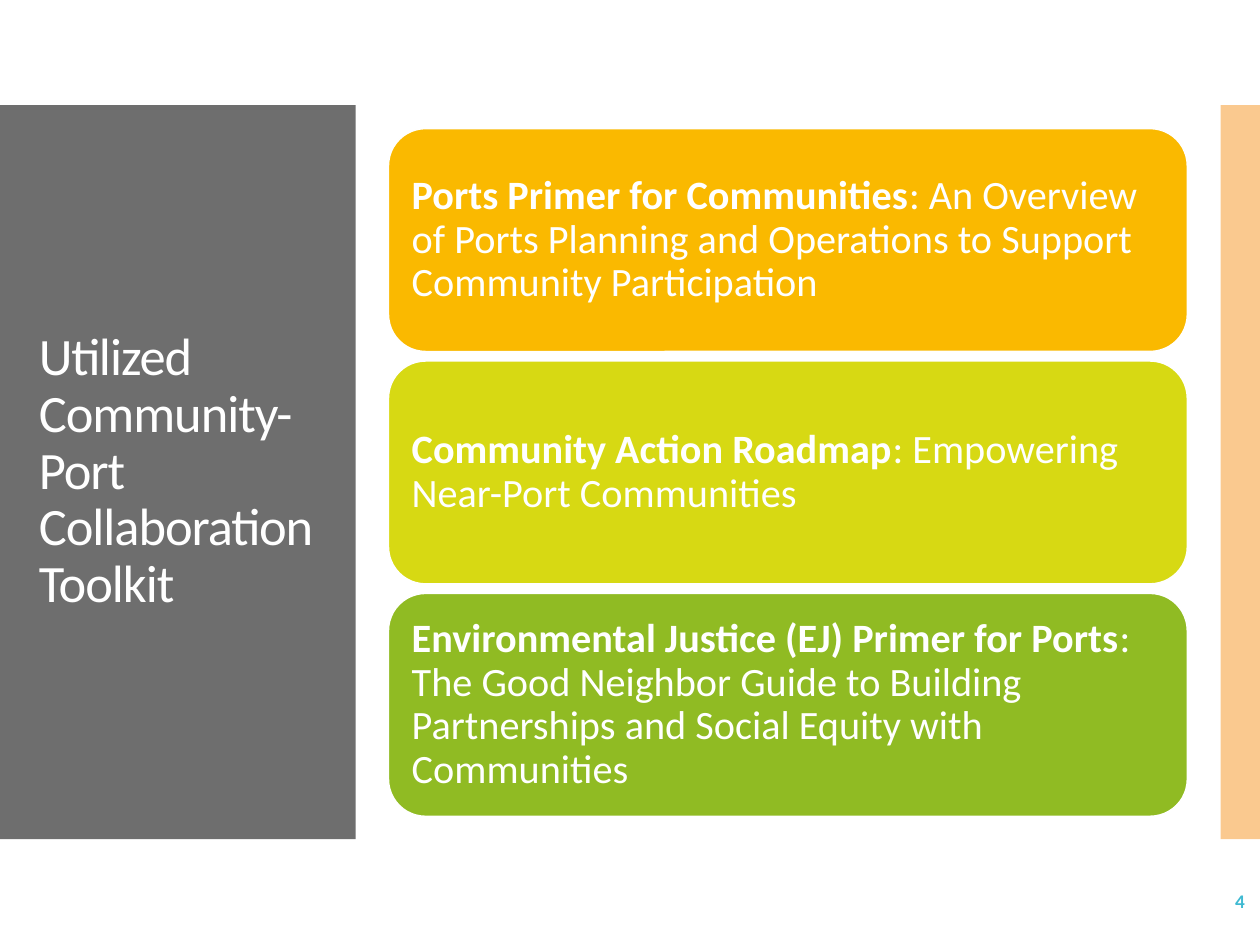
import pptx
import pptx.util
import pptx.dml.color
import pptx.enum.shapes
import pptx.enum.text
from lxml import etree

Pt = pptx.util.Pt
SHAPES = pptx.enum.shapes.MSO_SHAPE
ANCHOR = pptx.enum.text.MSO_ANCHOR
ALIGN = pptx.enum.text.PP_ALIGN

FONT = "Calibri"
COLORS = {
    "panel": "6E6E6E",
    "accent": "F79421",
    "white": "FFFFFF",
    "number": "40BAD2",
    "amber": "FAB900",
    "lime": "D7D913",
    "green": "90BB23",
}
# Non-breaking spaces follow some of the colons
TOOLS = [
    ("amber", "Ports Primer for Communities",
     ": An Overview of Ports Planning and Operations to Support Community Participation"),
    ("lime", "Community Action Roadmap",
     ": Empowering Near-Port Communities"),
    ("green", "Environmental Justice (EJ) Primer for Ports",
     ": The Good Neighbor Guide to Building Partnerships and Social Equity with Communities"),
]


def rgb(name):
    return pptx.dml.color.RGBColor.from_string(COLORS[name])


def format_run(run, size, color, bold=False):
    run.font.name = FONT
    run.font.size = Pt(size)
    run.font.bold = bold
    run.font.color.rgb = rgb(color)


def add_filled_shape(slide, kind, box, color):
    shape = slide.shapes.add_shape(kind, *map(Pt, box))
    shape.shadow.inherit = False
    shape.fill.solid()
    shape.fill.fore_color.rgb = rgb(color)
    shape.line.fill.background()
    return shape


def add_title_panel(slide, box):
    left, top, width, height = box
    panel = add_filled_shape(slide, SHAPES.RECTANGLE, box, "panel")
    title = slide.shapes.title
    # Bring the title in front of its panel
    panel._element.addnext(title._element)
    title.left, title.top = Pt(left + 15), Pt(top + 29)
    title.width, title.height = Pt(width - 18), Pt(height - 58)
    frame = title.text_frame
    frame.text = "Utilized Community-Port Collaboration Toolkit"
    frame.word_wrap = True
    frame.auto_size = pptx.enum.text.MSO_AUTO_SIZE.NONE
    frame.vertical_anchor = ANCHOR.MIDDLE
    paragraph = frame.paragraphs[0]
    paragraph.alignment = ALIGN.LEFT
    paragraph.line_spacing = 0.9
    run = paragraph.runs[0]
    format_run(run, 30, "white")
    run.font._element.set("spc", "-60")


def add_accent_bar(slide, box):
    bar = add_filled_shape(slide, SHAPES.RECTANGLE, box, "accent")
    color = bar.fill._xPr.find(".//" + pptx.oxml.ns.qn("a:srgbClr"))
    etree.SubElement(color, pptx.oxml.ns.qn("a:alpha"), val="50000")


def add_tool_cards(slide, box, gap):
    left, top, width, height = box
    card_height = (height - gap * (len(TOOLS) - 1)) / len(TOOLS)
    for index, (color, name, description) in enumerate(TOOLS):
        card_top = top + index * (card_height + gap)
        card = add_filled_shape(slide, SHAPES.ROUNDED_RECTANGLE,
                                (left, card_top, width, card_height), color)
        card.line.color.rgb = rgb("white")
        card.line.width = Pt(0.85)
        frame = card.text_frame
        frame.word_wrap = True
        frame.vertical_anchor = ANCHOR.MIDDLE
        frame.margin_left = frame.margin_right = Pt(7.2)
        frame.margin_top = frame.margin_bottom = Pt(7.2)
        paragraph = frame.paragraphs[0]
        paragraph.alignment = ALIGN.LEFT
        paragraph.line_spacing = 0.9
        for text, bold in ((name, True), (description, False)):
            run = paragraph.add_run()
            run.text = text
            format_run(run, 23, "white", bold)


def add_slide_number(slide, box, number):
    frame = slide.shapes.add_textbox(*map(Pt, box)).text_frame
    frame.text = str(number)
    frame.word_wrap = True
    frame.vertical_anchor = ANCHOR.MIDDLE
    paragraph = frame.paragraphs[0]
    paragraph.alignment = ALIGN.RIGHT
    format_run(paragraph.runs[0], 11, "number", bold=True)


def main():
    presentation = pptx.Presentation()
    presentation.slide_width, presentation.slide_height = Pt(720), Pt(540)
    slide = presentation.slides.add_slide(presentation.slide_layouts[5])

    # Side panels
    add_title_panel(slide, (0, 60, 203.3, 419.5))
    add_accent_bar(slide, (697.5, 60, 22.5, 419.5))
    # Toolkit parts
    add_tool_cards(slide, (222, 73.5, 456.5, 393), 5.4)
    # Footer
    add_slide_number(slide, (628, 500.5, 90.5, 29), 4)

    presentation.save("out.pptx")


if __name__ == "__main__":
    main()
